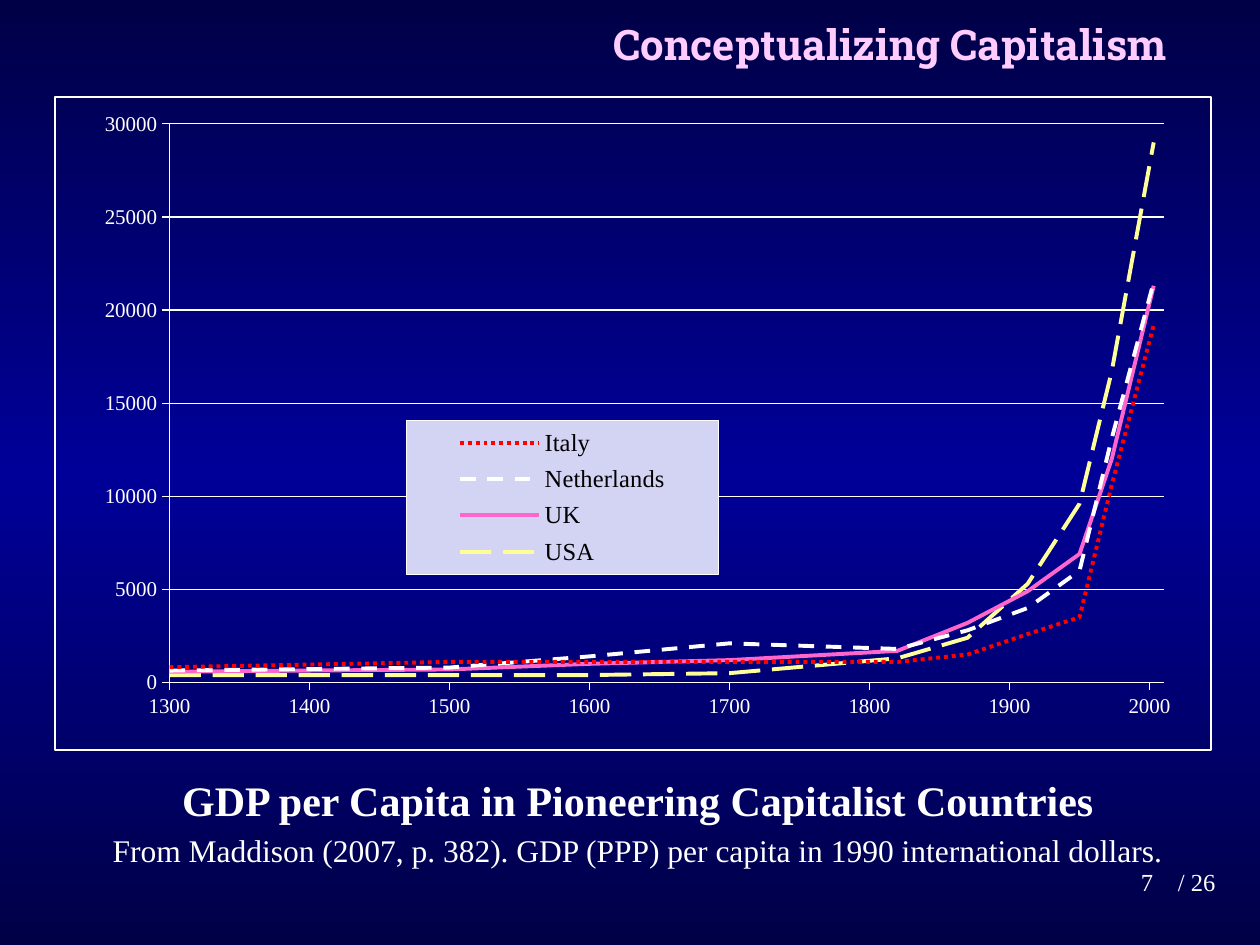
from copy import deepcopy

from pptx import Presentation
from pptx.chart.data import XyChartData
from pptx.dml.color import RGBColor
from pptx.enum.chart import XL_CHART_TYPE, XL_LEGEND_POSITION, XL_TICK_MARK
from pptx.enum.dml import MSO_LINE
from pptx.enum.text import MSO_ANCHOR, PP_ALIGN
from pptx.oxml import parse_xml
from pptx.oxml.ns import nsdecls, qn
from pptx.util import Pt

SCATTER = XL_CHART_TYPE.XY_SCATTER_SMOOTH_NO_MARKERS
LEFT, CENTER, RIGHT = PP_ALIGN.LEFT, PP_ALIGN.CENTER, PP_ALIGN.RIGHT
SERIF = "Times New Roman"
COLORS = {
    "edge": "000047", "middle": "000099", "title": "FFCCFF",
    "white": "FFFFFF", "black": "000000", "legend": "D3D3F4",
    "Italy": "FF0000", "Netherlands": "FFFFFF", "UK": "FF66CC", "USA": "FFFF99",
}
YEARS = [0, 1000, 1500, 1600, 1700, 1820, 1870, 1913, 1950, 1973, 2003]
GDP = {
    "Italy": [800, 400, 1100, 1100, 1100, 1100, 1500, 2600, 3500, 10600, 19200],
    "Netherlands": [400, 400, 800, 1400, 2100, 1800, 2800, 4000, 6000, 13100, 21500],
    "UK": [400, 400, 700, 1000, 1200, 1700, 3200, 4900, 6900, 12000, 21300],
    "USA": [400, 400, 400, 400, 500, 1300, 2400, 5300, 9600, 16700, 29000],
}
DASHES = {
    "Italy": MSO_LINE.ROUND_DOT, "Netherlands": MSO_LINE.DASH,
    "UK": MSO_LINE.SOLID, "USA": MSO_LINE.LONG_DASH,
}


def style(font, size, color="white", name=SERIF, bold=False):
    font.name, font.size, font.bold = name, Pt(size), bold
    font.color.rgb = RGBColor.from_string(COLORS[color])


def set_layout(parent, index, target, x, y, w, h):
    """Place a chart part by fractions of the chart area."""
    for old in parent.findall(qn("c:layout")):
        parent.remove(old)
    parent.insert(index, parse_xml(
        f'<c:layout {nsdecls("c")}><c:manualLayout>{target}'
        '<c:xMode val="edge"/><c:yMode val="edge"/>'
        f'<c:x val="{x}"/><c:y val="{y}"/><c:w val="{w}"/><c:h val="{h}"/>'
        '</c:manualLayout></c:layout>'))


deck = Presentation()
deck.slide_width, deck.slide_height = Pt(720), Pt(540)
page = deck.slides.add_slide(deck.slide_layouts[5])

# Background: dark at the top and bottom, lighter in the middle
background = page.background.fill
background.gradient()
background.gradient_angle = 270
first_stop = background.gradient_stops[0]._gs
first_stop.addnext(deepcopy(first_stop))
for stop, position, color in zip(background.gradient_stops, (0, 0.5, 1), ("edge", "middle", "edge")):
    stop.position = position
    stop.color.rgb = RGBColor.from_string(COLORS[color])

# Title
title = page.shapes.title
title.left, title.top, title.width, title.height = Pt(297.5), Pt(1), Pt(422.5), Pt(48)
title.text_frame.text = "Conceptualizing Capitalism"
title.text_frame.vertical_anchor = MSO_ANCHOR.MIDDLE
title.text_frame.paragraphs[0].alignment = CENTER
style(title.text_frame.paragraphs[0].runs[0].font, 24, "title", "Roboto Slab", True)

# Chart
data = XyChartData()
for country, values in GDP.items():
    series = data.add_series(country)
    for year, value in zip(YEARS, values):
        series.add_data_point(year, value)
chart = page.shapes.add_chart(SCATTER, Pt(31), Pt(55), Pt(661.5), Pt(374), data).chart
chart.has_title = False
style(chart.font, 10)
for series in chart.plots[0].series:
    series.smooth = True
    series.format.line.width = Pt(2.25)
    series.format.line.color.rgb = RGBColor.from_string(COLORS[series.name])
    series.format.line.dash_style = DASHES[series.name]

years, dollars = chart.category_axis, chart.value_axis
for axis, low, high, step in ((years, 1300, 2010, 100), (dollars, 0, 30000, 5000)):
    axis.minimum_scale, axis.maximum_scale, axis.major_unit = low, high, step
    axis.major_tick_mark = XL_TICK_MARK.OUTSIDE
    axis.minor_tick_mark = XL_TICK_MARK.NONE
    axis.tick_labels.number_format = "General"
    axis.tick_labels.number_format_is_linked = False
    style(axis.tick_labels.font, 12)
years.has_major_gridlines = False
dollars.has_major_gridlines = True
for line in (years.format.line, dollars.format.line, dollars.major_gridlines.format.line):
    line.width = Pt(0.75)
    line.color.rgb = RGBColor.from_string(COLORS["white"])

chart.has_legend = True
legend = chart.legend
legend.position = XL_LEGEND_POSITION.RIGHT
legend.include_in_layout = False
style(legend.font, 14, "black")
legend_xml = legend._element
set_layout(legend_xml, 1, "", 0.304, 0.495, 0.27, 0.236)
set_layout(chart._chartSpace.chart.plotArea, 0, '<c:layoutTarget val="inner"/>',
           0.099, 0.041, 0.86, 0.856)

# Frames of the legend and of the whole chart
solid = f'<a:solidFill><a:srgbClr val="{COLORS["legend"]}"/></a:solidFill>'
for neighbour, fill, width in ((legend_xml.find(qn("c:overlay")), solid, 0.25),
                               (chart._chartSpace.chart, "<a:noFill/>", 1)):
    neighbour.addnext(parse_xml(
        f'<c:spPr {nsdecls("c", "a")}>{fill}<a:ln w="{Pt(width)}"><a:solidFill>'
        f'<a:srgbClr val="{COLORS["white"]}"/></a:solidFill></a:ln></c:spPr>'))

# Caption and page number: box, then (text, size, bold, space before) per paragraph
captions = [
    ((49.5, 439, 630, 63), CENTER, [
        ("GDP per Capita in Pioneering Capitalist Countries", 24, True, 4.8),
        ("From Maddison (2007, p. 382). GDP (PPP) per capita in 1990 international dollars.",
         18, False, 3.6)]),
    ((604, 492, 62, 36), RIGHT, [("7", 14, False, 0)]),
    ((666, 492, 54, 24), LEFT, [("/ 26", 14, False, 0)]),
]
for bounds, alignment, lines in captions:
    box = page.shapes.add_textbox(*map(Pt, bounds))
    frame = box.text_frame
    frame.word_wrap = True
    frame.text = "\n".join(line[0] for line in lines)
    for para, (_, size, bold, space) in zip(frame.paragraphs, lines):
        para.alignment = alignment
        para.space_before = Pt(space)
        style(para.runs[0].font, size, bold=bold)

deck.save("out.pptx")
